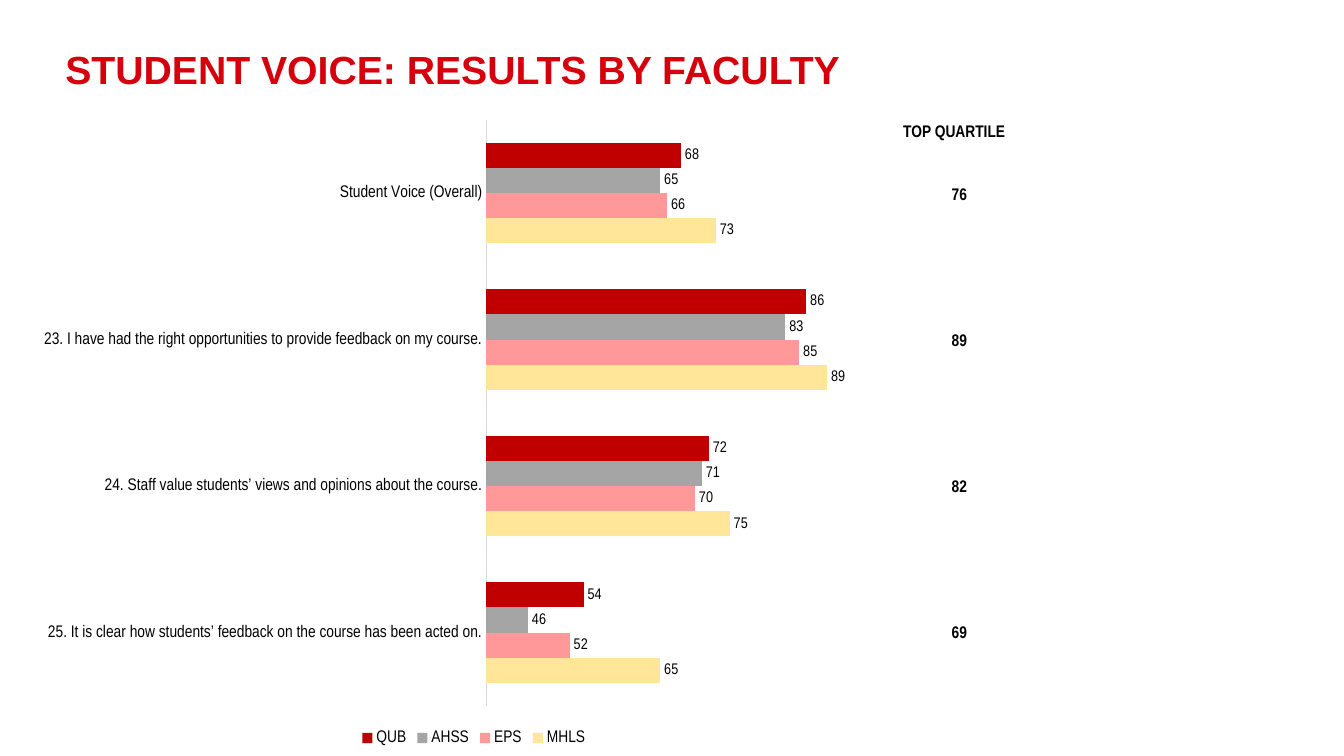
from pptx import Presentation
from pptx.chart.data import CategoryChartData
from pptx.dml.color import RGBColor
from pptx.enum.chart import XL_CHART_TYPE, XL_LABEL_POSITION, XL_LEGEND_POSITION, XL_TICK_MARK
from pptx.enum.text import MSO_ANCHOR, MSO_AUTO_SIZE
from pptx.util import Inches, Pt

BAR_CLUSTERED = XL_CHART_TYPE.BAR_CLUSTERED
OUTSIDE_END = XL_LABEL_POSITION.OUTSIDE_END
LEGEND_BOTTOM = XL_LEGEND_POSITION.BOTTOM
NO_TICK = XL_TICK_MARK.NONE
TOP, MIDDLE = MSO_ANCHOR.TOP, MSO_ANCHOR.MIDDLE
FIT_SHAPE = MSO_AUTO_SIZE.SHAPE_TO_FIT_TEXT
NO_FIT = MSO_AUTO_SIZE.NONE

COLORS = {
    "title": "D6000D",
    "text": "000000",
    "axis": "D9D9D9",
    "MHLS": "FFE699",
    "EPS": "FF9999",
    "AHSS": "A5A5A5",
    "QUB": "C00000",
}
QUESTIONS = [
    "25. It is clear how students’ feedback on the course has been acted on.",
    "24. Staff value students’ views and opinions about the course.",
    "23. I have had the right opportunities to provide feedback on my course.",
    "Student Voice (Overall)",
]
FACULTY_SCORES = {
    "MHLS": (65, 75, 89, 73),
    "EPS": (52, 70, 85, 66),
    "AHSS": (46, 71, 83, 65),
    "QUB": (54, 72, 86, 68),
}
TOP_QUARTILES = (76, 89, 82, 69)
QUARTILE_TOP, QUARTILE_STEP = 1.77, 1.45


def color(name):
    return RGBColor.from_string(COLORS[name])


def format_font(font, size, name="Arial Narrow", color_name="text", bold=False):
    font.size = Pt(size)
    font.name = name
    font.bold = bold
    font.color.rgb = color(color_name)


def write_text(text_frame, text, line_spacing=None, **font_format):
    paragraph = text_frame.paragraphs[0]
    if line_spacing:
        paragraph.line_spacing = line_spacing
    run = paragraph.add_run()
    run.text = text
    format_font(run.font, **font_format)


class SlideBuilder:
    def __init__(self, presentation):
        self.slide = presentation.slides.add_slide(presentation.slide_layouts[6])

    def text(self, text, box, wrap=False, anchor=MIDDLE, fit=FIT_SHAPE, size=12, **text_format):
        shape = self.slide.shapes.add_textbox(*map(Inches, box))
        text_frame = shape.text_frame
        text_frame.word_wrap = wrap
        text_frame.vertical_anchor = anchor
        text_frame.auto_size = fit
        write_text(text_frame, text, size=size, bold=True, **text_format)

    def bar_chart(self, categories, scores, box, minimum, maximum):
        chart_data = CategoryChartData()
        chart_data.categories = categories
        for name, values in scores.items():
            chart_data.add_series(name, values)
        chart = self.slide.shapes.add_chart(BAR_CLUSTERED, *map(Inches, box), chart_data).chart
        format_font(chart.font, 10, name="Arial")
        chart.has_title = False
        chart.has_legend = True
        chart.legend.position = LEGEND_BOTTOM
        chart.legend.include_in_layout = False
        format_font(chart.legend.font, 12)

        category_axis = chart.category_axis
        category_axis.major_tick_mark = NO_TICK
        category_axis.minor_tick_mark = NO_TICK
        category_axis.format.line.color.rgb = color("axis")
        category_axis.format.line.width = Pt(0.75)
        format_font(category_axis.tick_labels.font, 12)

        value_axis = chart.value_axis
        value_axis.minimum_scale = minimum
        value_axis.maximum_scale = maximum
        value_axis.has_major_gridlines = False
        value_axis.visible = False

        plot = chart.plots[0]
        plot.gap_width = 182
        plot.overlap = 0
        plot.vary_by_categories = False
        for series in plot.series:
            series.invert_if_negative = False
            series.format.fill.solid()
            series.format.fill.fore_color.rgb = color(series.name)
            labels = series.data_labels
            labels.show_value = True
            labels.position = OUTSIDE_END
            format_font(labels.font, 11)


def main():
    presentation = Presentation()
    presentation.slide_width = Inches(13.33)
    presentation.slide_height = Inches(7.5)
    builder = SlideBuilder(presentation)
    builder.text(
        "STUDENT VOICE: RESULTS BY FACULTY",
        (0.55, 0.45, 11.42, 1.09),
        wrap=True,
        anchor=TOP,
        fit=NO_FIT,
        size=28,
        name="Arial",
        color_name="title",
        line_spacing=0.9,
    )
    builder.bar_chart(QUESTIONS, FACULTY_SCORES, (0.26, 1.06, 8.88, 6.38), 40, 100)
    builder.text("TOP QUARTILE", (8.86, 1.15, 1.23, 0.3))
    for row, quartile in enumerate(TOP_QUARTILES):
        builder.text(str(quartile), (9.34, QUARTILE_TOP + row * QUARTILE_STEP, 0.36, 0.3))
    presentation.save("out.pptx")


if __name__ == "__main__":
    main()
